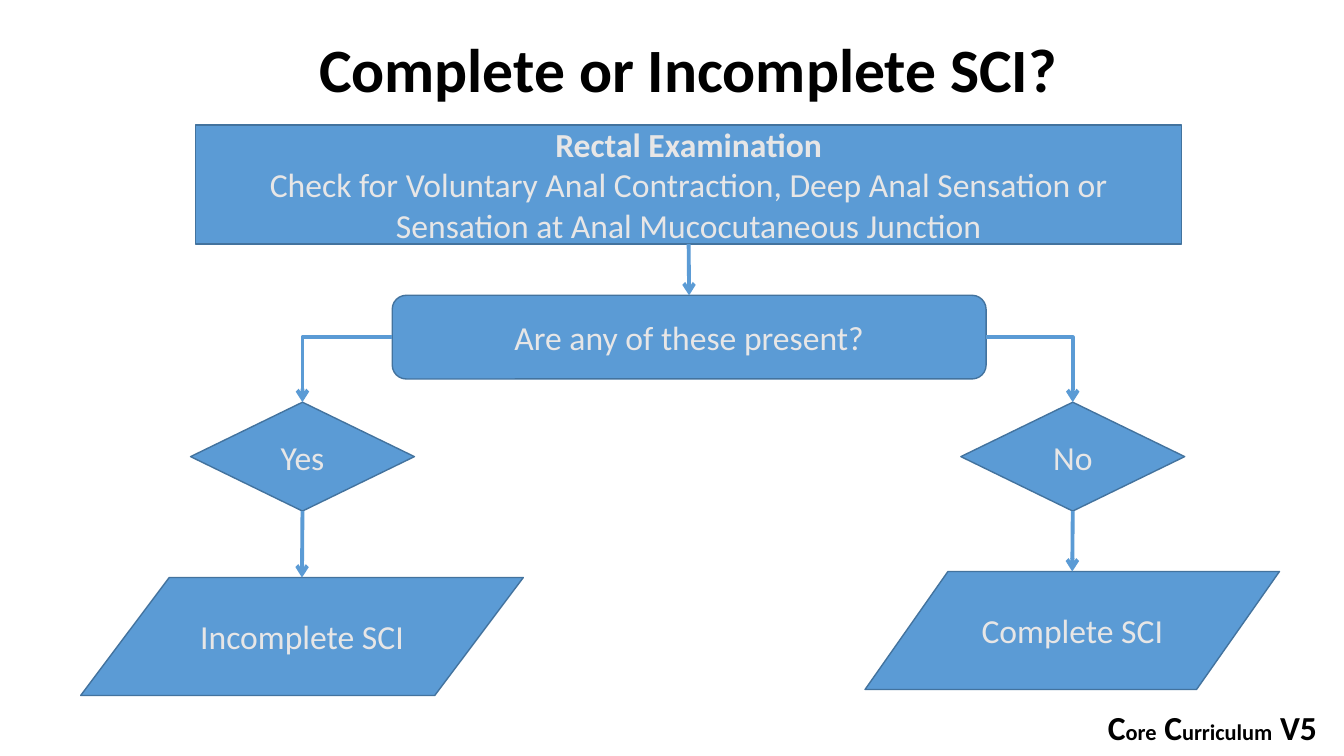
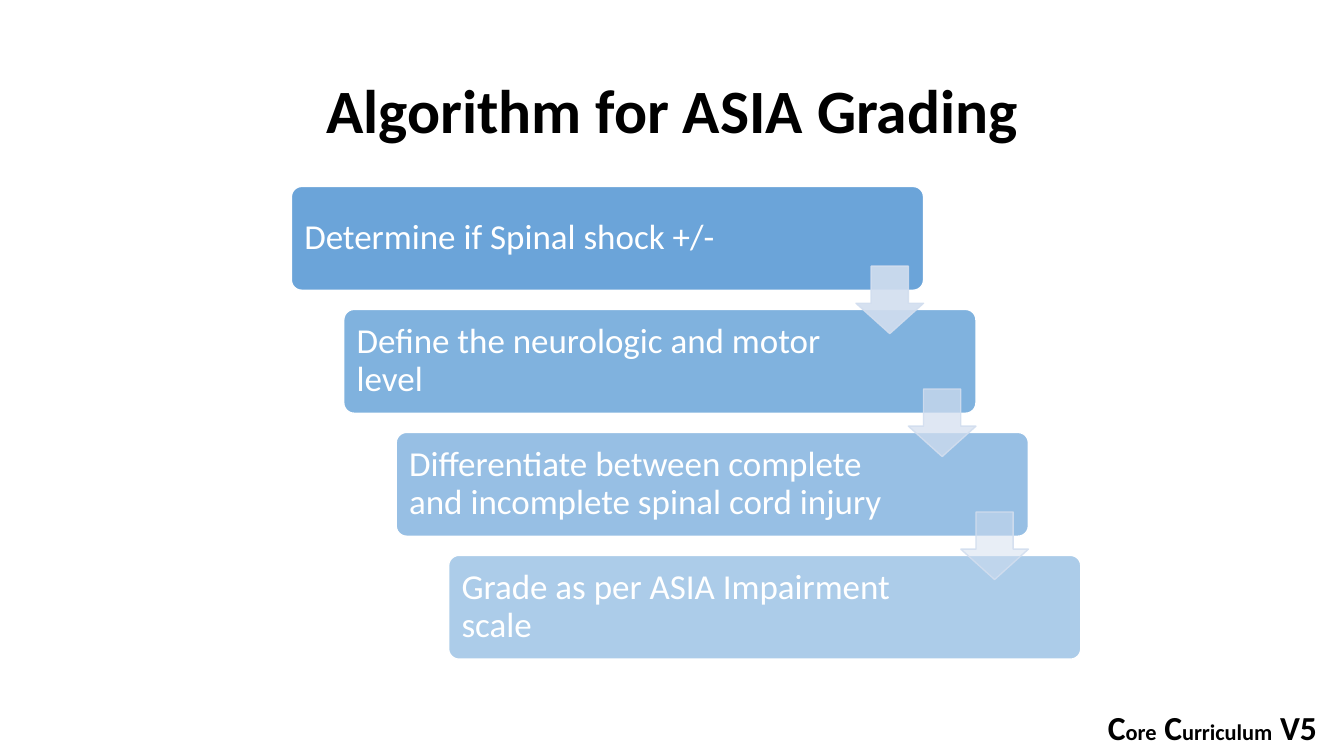
from pptx import Presentation
from pptx.dml.color import RGBColor
from pptx.enum.shapes import MSO_CONNECTOR, MSO_SHAPE
from pptx.enum.text import MSO_ANCHOR, PP_ALIGN
from pptx.oxml.ns import qn
from pptx.util import Inches, Pt
from lxml.etree import SubElement

BLACK = RGBColor(0x00, 0x00, 0x00)
WHITE = RGBColor(0xFF, 0xFF, 0xFF)
LIGHT_GRAY = RGBColor(0xE7, 0xE6, 0xE6)
BLUE = RGBColor(0x5B, 0x9B, 0xD5)
DARK_BLUE = RGBColor(0x43, 0x73, 0x9E)
PALE_BLUE = RGBColor(0xD2, 0xDE, 0xEF)
FONT = "Calibri"

TOP, LEFT, BOTTOM, RIGHT = range(4)

FOOTER = [("C", 24), ("ore", 16), (" C", 24), ("urriculum", 16), (" V5", 24)]
STEPS = [  # text, opacity of its box in percent
    ("Determine if Spinal shock +/-", 90),
    ("Define the neurologic and motor level", 77),
    ("Differentiate between complete and incomplete spinal cord injury", 63),
    ("Grade as per ASIA Impairment scale", 50),
]
ARROW_OPACITY = [90, 70, 50]
STEP_DX, STEP_DY = 0.52, 1.22


# Shared elements
def add_run(p, text, size, color, bold=False):
    r = p.add_run()
    r.text = text
    r.font.name = FONT
    r.font.size = Pt(size)
    r.font.bold = bold
    r.font.color.rgb = color


def add_footer(slide, layout):
    """Build the footer and move it to the layout, so every slide shows it."""
    box = slide.shapes.add_textbox(Inches(10.89), Inches(6.96), Inches(2.35), Inches(0.5))
    box.text_frame.word_wrap = True
    for text, size in FOOTER:
        add_run(box.text_frame.paragraphs[0], text, size, BLACK, True)
    layout.shapes.element.append(box.element)


def add_title(slide, text, x, y):
    title = slide.shapes.title
    title.left, title.top = Inches(x), Inches(y)
    title.width, title.height = Inches(11.5), Inches(1.45)
    tf = title.text_frame
    tf.vertical_anchor = MSO_ANCHOR.MIDDLE
    p = tf.paragraphs[0]
    p.alignment = PP_ALIGN.CENTER
    p.line_spacing = 0.9
    add_run(p, text, 44, BLACK, True)


def set_opacity(fill_parent, percent):
    color = fill_parent.find(qn("a:solidFill")).find(qn("a:srgbClr"))
    SubElement(color, qn("a:alpha")).set("val", str(percent * 1000))


def add_shape(slide, kind, x, y, w, h, fill, line):
    sp = slide.shapes.add_shape(kind, Inches(x), Inches(y), Inches(w), Inches(h))
    sp.shadow.inherit = False
    sp.fill.solid()
    sp.fill.fore_color.rgb = fill
    sp.line.color.rgb = line
    sp.line.width = Pt(1)
    sp.text_frame.vertical_anchor = MSO_ANCHOR.MIDDLE
    sp.text_frame.word_wrap = True
    return sp


# Flowchart elements
def add_node(slide, kind, x, y, w, h, *lines):
    """Each line is a (text, bold) pair."""
    sp = add_shape(slide, kind, x, y, w, h, BLUE, DARK_BLUE)
    tf = sp.text_frame
    for i, (text, bold) in enumerate(lines):
        p = tf.add_paragraph() if i else tf.paragraphs[0]
        p.alignment = PP_ALIGN.CENTER
        add_run(p, text, 24, LIGHT_GRAY, bold)
    return sp


def add_arrow(slide, start, start_side, end, join_end=True, bent=False):
    """Arrow from a side of start to the top middle of end."""
    kind = MSO_CONNECTOR.ELBOW if bent else MSO_CONNECTOR.STRAIGHT
    end_x = end.left + end.width // 2
    cxn = slide.shapes.add_connector(kind, end_x, start.top, end_x, end.top)
    cxn.begin_connect(start, start_side)
    if join_end:
        cxn.end_connect(end, TOP)
    cxn.line.color.rgb = BLUE
    cxn.line.width = Pt(2.75)
    sp_pr = cxn.element.spPr
    if bent:
        sp_pr.find(qn("a:prstGeom")).set("prst", "bentConnector2")
    SubElement(sp_pr.find(qn("a:ln")), qn("a:tailEnd")).set("type", "arrow")
    SubElement(sp_pr, qn("a:effectLst"))


# Staircase elements
def add_step(slide, index, text, opacity):
    sp = add_shape(slide, MSO_SHAPE.ROUNDED_RECTANGLE, 2.89 + index * STEP_DX,
                   1.85 + index * STEP_DY, 6.27, 1.03, BLUE, WHITE)
    sp.adjustments[0] = 0.1
    set_opacity(sp.element.spPr, opacity)
    tf = sp.text_frame
    tf.margin_left = tf.margin_top = tf.margin_bottom = Inches(0.1)
    tf.margin_right = Inches(1.27)
    p = tf.paragraphs[0]
    p.alignment = PP_ALIGN.LEFT
    p.line_spacing = 0.9
    add_run(p, text, 25, WHITE)


def add_step_arrow(slide, index, opacity):
    sp = add_shape(slide, MSO_SHAPE.DOWN_ARROW, 8.49 + index * STEP_DX,
                   2.64 + index * STEP_DY, 0.67, 0.67, PALE_BLUE, PALE_BLUE)
    sp.adjustments[0] = 0.55
    sp.adjustments[1] = 0.45
    set_opacity(sp.element.spPr, opacity)
    set_opacity(sp.element.spPr.find(qn("a:ln")), 90)


# Slides
def build_flowchart(slide):
    add_title(slide, "Complete or Incomplete SCI?", 1.08, -0.01)
    exam = add_node(
        slide, MSO_SHAPE.FLOWCHART_PROCESS, 1.94, 1.24, 9.78, 1.18,
        ("Rectal Examination", True),
        ("Check for Voluntary Anal Contraction, Deep Anal Sensation or "
         "Sensation at Anal Mucocutaneous Junction", False))
    question = add_node(slide, MSO_SHAPE.FLOWCHART_ALTERNATE_PROCESS,
                        3.89, 2.93, 5.89, 0.83, ("Are any of these present?", False))
    add_arrow(slide, exam, BOTTOM, question)

    branches = [  # side, answer, its left, result, its left, top and width
        (LEFT, "Yes", 1.89, "Incomplete SCI", 0.8, 5.73, 4.39),
        (RIGHT, "No", 9.53, "Complete SCI", 8.58, 5.67, 4.11),
    ]
    for side, answer, answer_x, result, x, y, w in branches:
        decision = add_node(slide, MSO_SHAPE.FLOWCHART_DECISION,
                            answer_x, 3.99, 2.22, 1.08, (answer, False))
        outcome = add_node(slide, MSO_SHAPE.FLOWCHART_DATA, x, y, w, 1.17, (result, False))
        add_arrow(slide, question, side, decision, bent=True)
        # The top site of a parallelogram is off centre, so this end stays free
        add_arrow(slide, decision, BOTTOM, outcome, join_end=False)


def build_algorithm(slide):
    add_title(slide, "Algorithm for ASIA Grading", 0.92, 0.4)
    for i, (text, opacity) in enumerate(STEPS):
        add_step(slide, i, text, opacity)
    for i, opacity in enumerate(ARROW_OPACITY):
        add_step_arrow(slide, i, opacity)


def main():
    prs = Presentation()
    prs.slide_width, prs.slide_height = Inches(13.33), Inches(7.5)
    layout = prs.slide_layouts[5]
    flowchart = prs.slides.add_slide(layout)
    algorithm = prs.slides.add_slide(layout)
    add_footer(flowchart, layout)
    build_flowchart(flowchart)
    build_algorithm(algorithm)
    prs.save("out.pptx")


if __name__ == "__main__":
    main()
